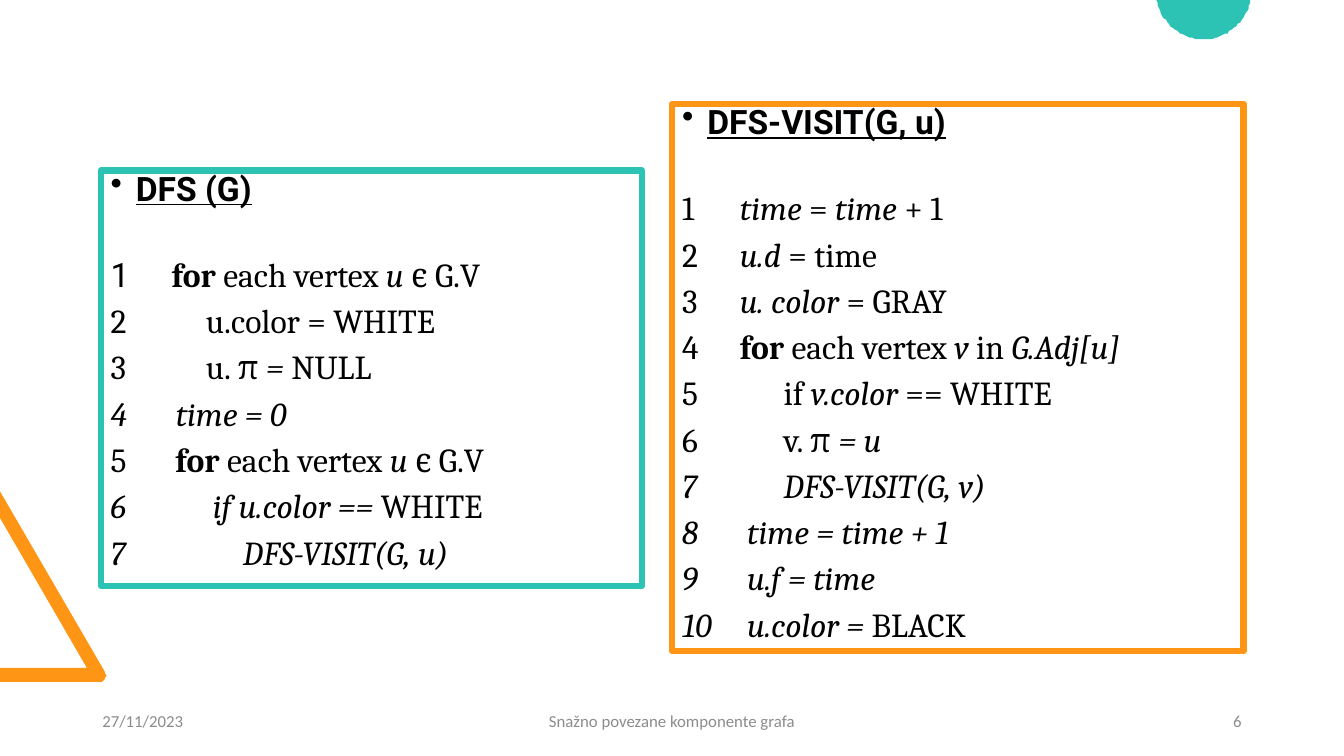
import math

import pptx
import pptx.dml.color
import pptx.enum.shapes
import pptx.enum.text
import pptx.oxml.ns
import pptx.util
from lxml import etree

Pt = pptx.util.Pt
ALIGN = pptx.enum.text.PP_ALIGN

COLORS = {"teal": "2CC3B4", "orange": "FF9514", "white": "FFFFFF",
          "ink": "000000", "footer": "8C8C8C"}
FORMATS = {
    "heading": {"name": "Roboto", "size": Pt(24), "bold": True, "underline": True},
    "number": {"name": "Roboto", "size": Pt(24)},
    "plain": {"name": "Cambria", "size": Pt(24)},
    "keyword": {"name": "Cambria", "size": Pt(24), "bold": True},
    "italic": {"name": "Cambria", "size": Pt(24), "italic": True},
    "footer": {"name": "Calibri", "size": Pt(12)},
}

# Each code line: text indent in points, then (format, text) pieces.
# A leading plain space keeps the automatic line number upright.
DFS = [
    (43.5, [("number", "1\t"), ("keyword", "for "), ("plain", "each vertex "),
            ("italic", "u"), ("plain", " ϵ G.V")]),
    (68, [("plain", "u.color = WHITE")]),
    (68, [("plain", "u. π "), ("italic", "= "), ("plain", "NULL")]),
    (46.5, [("italic", "time = 0")]),
    (41, [("plain", " "), ("keyword", "for "), ("plain", "each vertex "),
          ("italic", "u"), ("plain", " ϵ G.V")]),
    (73, [("italic", "if u.color == "), ("plain", "WHITE")]),
    (94.5, [("italic", "DFS-VISIT(G, u)")]),
]
DFS_VISIT = [
    (36, [("plain", " "), ("italic", "time"), ("plain", " = "),
          ("italic", "time"), ("plain", " + 1")]),
    (36, [("plain", " "), ("italic", "u.d "), ("plain", "= time")]),
    (36, [("plain", " "), ("italic", "u. color "), ("plain", "= GRAY")]),
    (36, [("plain", " "), ("keyword", "for "), ("plain", "each vertex "),
          ("italic", "v "), ("plain", "in "), ("italic", "G.Adj[u]")]),
    (72.5, [("plain", "if "), ("italic", "v.color "), ("plain", "== WHITE")]),
    (72.5, [("plain", "v. π "), ("italic", "= u")]),
    (72.5, [("italic", "DFS-VISIT(G, v)")]),
    (46.5, [("italic", "time = time + 1")]),
    (46.5, [("italic", "u.f = time")]),
    (46.5, [("italic", "u.color = "), ("plain", "BLACK")]),
]


def rgb(color):
    return pptx.dml.color.RGBColor.from_string(COLORS[color])


def add_piece(paragraph, text, style, color="ink"):
    piece = paragraph.add_run()
    piece.text = text
    for attribute, value in FORMATS[style].items():
        setattr(piece.font, attribute, value)
    piece.font.color.rgb = rgb(color)


def set_marker(paragraph, indent, tag=None, **attributes):
    """Give the paragraph a hanging indent and, with a tag, a bullet or number."""
    properties = paragraph._p.get_or_add_pPr()
    properties.set("marL", str(Pt(indent)))
    properties.set("indent", str(-Pt(indent)))
    if tag:
        marker = etree.SubElement(properties, pptx.oxml.ns.qn(tag))
        for name, value in attributes.items():
            marker.set(name, value)


def code_panel(slide, box, border, heading, lines, first_number):
    """Draw a framed listing; lines before first_number carry typed numbers."""
    panel = slide.shapes.add_shape(pptx.enum.shapes.MSO_SHAPE.RECTANGLE,
                                   *(Pt(length) for length in box))
    panel.shadow.inherit = False
    panel.fill.solid()
    panel.fill.fore_color.rgb = rgb("white")
    panel.line.color.rgb = rgb(border)
    panel.line.width = Pt(4.5)
    frame = panel.text_frame
    frame.word_wrap = True
    frame.vertical_anchor = pptx.enum.text.MSO_ANCHOR.TOP

    title = frame.paragraphs[0]
    add_piece(title, heading, "heading")
    code = [frame.add_paragraph() for _ in lines]
    for paragraph in [title] + code:
        paragraph.alignment = ALIGN.LEFT
        paragraph.line_spacing = 0.8
        paragraph.space_before = Pt(10)
    title.space_after = Pt(28.5)
    set_marker(title, 18, "a:buChar", char="•")

    for number, (paragraph, (indent, pieces)) in enumerate(zip(code, lines), 1):
        if number < first_number:
            set_marker(paragraph, indent)
        else:
            set_marker(paragraph, indent, "a:buAutoNum", type="arabicPlain",
                       startAt=str(first_number))
        for style, text in pieces:
            add_piece(paragraph, text, style)


def arc(center_x, center_y, radius, start, end, steps):
    """Points on an arc, angles in degrees clockwise from the right."""
    angles = (math.radians(start + (end - start) * step / steps)
              for step in range(steps + 1))
    return [(center_x + radius * math.cos(angle), center_y + radius * math.sin(angle))
            for angle in angles]


def ornament(slide, outline, color):
    builder = slide.shapes.build_freeform(*outline[0], scale=float(Pt(1)))
    builder.add_line_segments(outline[1:], close=True)
    form = builder.convert_to_shape()
    form.shadow.inherit = False
    form.fill.solid()
    form.fill.fore_color.rgb = rgb(color)
    form.line.fill.background()


def footer(slide, box):
    """Place date, title and page number along the given strip."""
    left, top, width, height = box
    side, middle = 216, 324
    parts = [
        (left, side, ALIGN.LEFT, "27/11/2023"),
        (left + (width - middle) / 2, middle, ALIGN.CENTER,
         "Snažno povezane komponente grafa"),
        (left + width - side, side, ALIGN.RIGHT, "6"),
    ]
    for x, part_width, alignment, text in parts:
        part = slide.shapes.add_textbox(Pt(x), Pt(top), Pt(part_width), Pt(height))
        part.text_frame.word_wrap = True
        part.text_frame.vertical_anchor = pptx.enum.text.MSO_ANCHOR.MIDDLE
        paragraph = part.text_frame.paragraphs[0]
        paragraph.alignment = alignment
        add_piece(paragraph, text, "footer", "footer")


def main():
    deck = pptx.Presentation()
    deck.slide_width, deck.slide_height = Pt(960), Pt(540)
    slide = deck.slides.add_slide(deck.slide_layouts[6])

    triangle_corner = arc(70.6, 482.4, 5, -30, 90, 12)
    ornament(slide, [(0, 477.4), (61.9, 477.4), (0, 370), (0, 350.6)]
             + triangle_corner + [(0, 487.4)], "orange")
    ornament(slide, arc(859.7, -5.7, 33.8, 9.7, 170.3, 48), "teal")

    code_panel(slide, (72, 121.8, 386.6, 296.6), "teal", "DFS (G)", DFS, 2)
    code_panel(slide, (480.2, 74.2, 408.2, 391), "orange", "DFS-VISIT(G, u)",
               DFS_VISIT, 1)
    footer(slide, (66, 500.5, 828, 28.8))
    deck.save("out.pptx")


if __name__ == "__main__":
    main()
